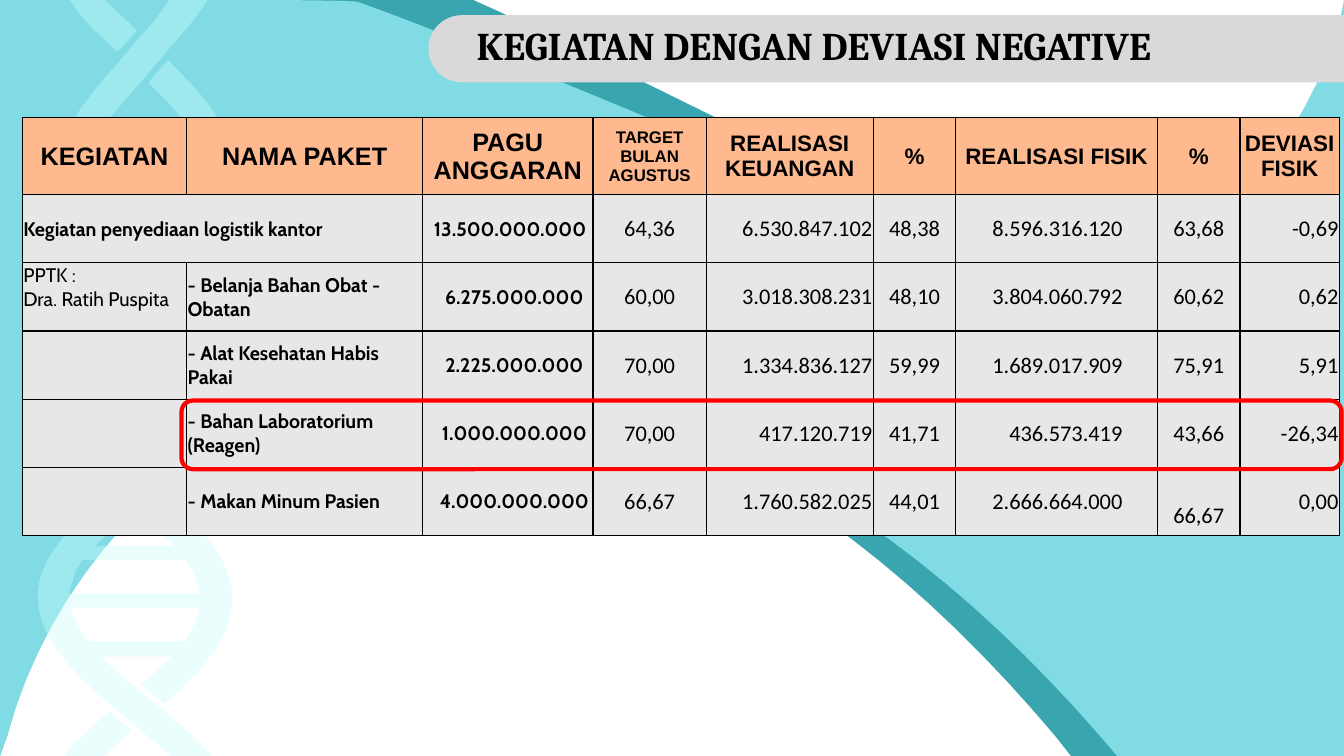
from lxml import etree
from pptx import Presentation
from pptx import util as u
from pptx.dml.color import RGBColor
from pptx.enum import shapes, text
from pptx.oxml import ns

TEAL = RGBColor(0x39, 0xA5, 0xAE)
CYAN = RGBColor(0x80, 0xDB, 0xE4)
HELIX = RGBColor(0xCD, 0xFE, 0xFD)
PEACH = RGBColor(0xFE, 0xB9, 0x8F)
GREY = RGBColor(0xE7, 0xE7, 0xE7)
BANNER = RGBColor(0xD9, 0xD9, 0xD9)
BLACK = RGBColor(0, 0, 0)
RED = RGBColor(0xFF, 0, 0)
LEFT, CENTER, RIGHT = text.PP_ALIGN.LEFT, text.PP_ALIGN.CENTER, text.PP_ALIGN.RIGHT

BACK_WAVE = [[
    (11, 0), (125, 107), (920, 324), (920, 540), (765, 540), (754, 526),
    (662, 417, 564, 339, 441, 291), (379, 267, 286, 261, 222, 284),
    (116, 317, 34, 415, 5, 526), (0, 540), (0, 0)]]
RIBBON = [[
    (3, 0), (338, 0), (358, 9), (441, 49, 543, 100, 607, 131),
    (826, 237, 916, 122, 948, 53), (953, 41), (953, 42), (949, 53),
    (922, 125, 840, 246, 614, 156), (518, 117, 340, 42, 258, 14), (2, 14)]]
FRONT_WAVE = [[
    (123, 0), (185, 0, 249, 0, 255.6, 1.4), (337, 30, 515, 107, 611, 145),
    (918, 271, 960, 0, 960, 0), (960, 540), (798, 540), (786, 526),
    (691, 417, 589, 339, 460, 291), (395, 267, 298, 261, 232, 284),
    (122, 317, 35, 415, 5, 526), (0, 540), (0, 0)]]
STRANDS = [
    [(121, 0), (148, 0), (140, 14, 129, 25, 119, 37), (77, 86), (131, 86),
     (124, 77, 115, 68, 106, 59), (120, 43), (145, 68, 168, 92, 168, 122),
     (168, 154, 148, 177, 125, 197), (108, 184), (116, 176, 124, 169, 130, 161),
     (78, 161), (85, 169, 93, 176, 102, 184), (125, 202),
     (141, 216, 156, 231, 162, 251), (165, 261, 165, 282, 161, 296),
     (153, 315, 135, 333, 118, 348), (94, 366), (85, 374, 76, 382, 68, 390),
     (124, 390), (117, 382, 109, 374, 102, 366), (118, 354),
     (143, 377, 166, 400, 166, 428), (166, 456, 143, 480, 117, 503),
     (101, 489), (109, 482, 116, 476, 123, 469), (72, 469),
     (79, 476, 86, 482, 94, 489), (114, 505), (125, 515, 134, 522, 142, 530),
     (151, 540), (122, 540), (114, 533), (81, 505), (51, 480, 27, 455, 27, 426),
     (27, 397, 53, 374, 80, 351), (103, 333), (112, 325, 120, 318, 126, 310),
     (78, 310), (83, 318, 89, 325, 96, 333), (80, 346),
     (58, 323, 38, 297, 38, 265), (38, 239, 60, 220, 84, 201), (101, 215),
     (91, 222, 83, 229, 76, 235), (130, 235), (124, 228, 117, 222, 108, 215),
     (85, 196), (62, 177, 41, 155, 41, 121), (41, 96, 61, 71, 85, 44),
     (101, 25), (107, 19, 112, 13, 117, 6)],
    [(50, 0), (75, 0), (98, 22), (84, 37), (72, 26, 58, 14, 50, 0)],
    [(78, 508), (94, 522), (74, 540), (46, 540), (50, 534)]]
RUNG_GAPS = [
    [(50, 434), (55, 446), (63, 458), (132, 458), (139, 446), (143, 434)],
    [(59, 400), (54, 408), (49, 424), (143, 424), (138, 408), (132, 400)],
    [(61, 279), (65, 289), (71, 302), (133, 302), (140, 289), (143, 279)],
    [(67, 246), (63, 251), (60, 269), (143, 269), (139, 251), (137, 246)],
    [(63, 129), (66, 141), (71, 151), (137, 151), (142, 141), (145, 129)],
    [(71, 96), (68, 102), (63, 119), (145, 119), (140, 102), (138, 96)]]

COLUMNS = [117.4, 168.5, 121.7, 81, 119.2, 59, 144, 59, 71]
HEADINGS = [("KEGIATAN", 18), ("NAMA PAKET", 18), ("PAGU ANGGARAN", 18),
            ("TARGET BULAN\nAGUSTUS", 12), ("REALISASI KEUANGAN", 16), ("%", 16),
            ("REALISASI FISIK", 16), ("%", 16), ("DEVIASI FISIK", 16)]
PACKAGES = [
    ("Kegiatan penyediaan logistik kantor", "", "13.500.000.000", "64,36",
     "6.530.847.102", "48,38", "8.596.316.120", "63,68", "-0,69"),
    ("PPTK :\nDra. Ratih Puspita", "- Belanja Bahan Obat - Obatan", "6.275.000.000",
     "60,00", "3.018.308.231", "48,10", "3.804.060.792", "60,62", "0,62"),
    ("", "- Alat Kesehatan Habis Pakai", "2.225.000.000", "70,00",
     "1.334.836.127", "59,99", "1.689.017.909", "75,91", "5,91"),
    ("", "- Bahan Laboratorium (Reagen)", "1.000.000.000", "70,00",
     "417.120.719", "41,71", "436.573.419", "43,66", "-26,34"),
    ("", "- Makan Minum Pasien", "4.000.000.000", "66,67",
     "1.760.582.025", "44,01", "2.666.664.000", "66,67", "0,00")]
ALIGNS = [LEFT, LEFT, CENTER, CENTER, RIGHT, CENTER, RIGHT, CENTER, RIGHT]


def flatten(contour, steps=16):
    """Return the contour's points in EMU, with its Bézier curves divided into steps."""
    points = [contour[0]]
    for segment in contour[1:]:
        if len(segment) == 2:
            points.append(segment)
            continue
        x0, y0 = points[-1]
        x1, y1, x2, y2, x3, y3 = segment
        for step in range(1, steps + 1):
            t = step / steps
            a, b, c, d = (1 - t) ** 3, 3 * t * (1 - t) ** 2, 3 * t * t * (1 - t), t ** 3
            points.append((a * x0 + b * x1 + c * x2 + d * x3,
                           a * y0 + b * y1 + c * y2 + d * y3))
    return [(u.Pt(x), u.Pt(y)) for x, y in points]


def add_outline(slide, contours, color):
    """Draw the closed contours as one filled freeform."""
    first, *others = [flatten(contour) for contour in contours]
    builder = slide.shapes.build_freeform(*first[0])
    builder.add_line_segments(first[1:], close=True)
    for points in others:
        builder.move_to(*points[0])
        builder.add_line_segments(points[1:], close=True)
    outline = builder.convert_to_shape()
    outline.shadow.inherit = False
    outline.fill.solid()
    outline.fill.fore_color.rgb = color
    outline.line.fill.background()
    return outline


def add_background(slide):
    """Draw the waves and the translucent helix."""
    add_outline(slide, BACK_WAVE, TEAL)
    add_outline(slide, RIBBON, TEAL)
    add_outline(slide, FRONT_WAVE, CYAN)
    helix = add_outline(slide, STRANDS + RUNG_GAPS, HELIX)
    tint = helix._element.spPr.find(".//" + ns.qn("a:srgbClr"))
    etree.SubElement(tint, ns.qn("a:alpha"), val="40000")


def add_banner(slide, left, top, width, height):
    """Draw the banner, rounded at its left end, and set the title on it."""
    banner = slide.shapes.add_shape(
        shapes.MSO_SHAPE.ROUND_2_SAME_RECTANGLE,
        u.Pt(left + (width - height) / 2), u.Pt(top + (height - width) / 2),
        u.Pt(height), u.Pt(width))
    banner.rotation = 90
    banner.adjustments[0], banner.adjustments[1] = 0, 0.5
    banner.shadow.inherit = False
    banner.fill.solid()
    banner.fill.fore_color.rgb = BANNER
    banner.line.fill.background()

    title = slide.shapes.title
    title._element.getparent().append(title._element)
    title.left, title.top = u.Pt(left + 27.3), u.Pt(top + 4.3)
    title.width, title.height = u.Pt(600), u.Pt(44)
    frame = title.text_frame
    frame.text = "KEGIATAN DENGAN DEVIASI NEGATIVE"
    frame.word_wrap = True
    frame.auto_size = text.MSO_AUTO_SIZE.NONE
    frame.vertical_anchor = text.MSO_ANCHOR.TOP
    frame.paragraphs[0].alignment = LEFT
    frame.paragraphs[0].line_spacing = 0.9
    style_font(frame.paragraphs[0].runs[0].font, "Cambria", 28, True)


def style_font(font, name, size, bold):
    """Set a black font."""
    font.name, font.size, font.bold = name, u.Pt(size), bold
    font.color.rgb = BLACK


def fill_cell(cell, words, color, align, name, size, bold):
    """Border, fill and write one cell."""
    properties = cell._tc.get_or_add_tcPr()
    for side in ("lnL", "lnR", "lnT", "lnB"):
        border = etree.SubElement(properties, ns.qn("a:" + side), w=str(u.Pt(1)))
        paint = etree.SubElement(border, ns.qn("a:solidFill"))
        etree.SubElement(paint, ns.qn("a:srgbClr"), val=str(BLACK))
    cell.fill.solid()
    cell.fill.fore_color.rgb = color
    cell.margin_left = cell.margin_right = cell.margin_top = u.Pt(0.7)
    cell.margin_bottom = 0
    cell.vertical_anchor = text.MSO_ANCHOR.MIDDLE
    cell.text_frame.text = words
    for paragraph in cell.text_frame.paragraphs:
        paragraph.alignment = align
        for run in paragraph.runs:
            style_font(run.font, name, size, bold)


def add_budget_table(slide, left, top, head_height, row_height):
    """Build the budget table and frame the row with the large deviation."""
    width = sum(COLUMNS)
    height = head_height + row_height * len(PACKAGES)
    table = slide.shapes.add_table(len(PACKAGES) + 1, len(COLUMNS), u.Pt(left), u.Pt(top),
                                   u.Pt(width), u.Pt(height)).table
    for column, column_width in zip(table.columns, COLUMNS):
        column.width = u.Pt(column_width)
    for number, row in enumerate(table.rows):
        row.height = u.Pt(row_height if number else head_height)
    for col, (heading, size) in enumerate(HEADINGS):
        fill_cell(table.cell(0, col), heading, PEACH, CENTER, "Arial", size, True)
    for row, package in enumerate(PACKAGES, 1):
        for col, words in enumerate(package):
            name, size = ("Cabin", 14) if col < 3 else ("Calibri", 16)
            bold = col in (1, 2) or (row == 1 and col == 0)
            fill_cell(table.cell(row, col), words, GREY, ALIGNS[col], name, size, bold)
        table.cell(row, 2).margin_left = u.Pt(4 if row == 1 else 10)
        table.cell(row, 6).margin_right = u.Pt(25)
    table.cell(1, 0).merge(table.cell(1, 1))
    table.cell(2, 0).vertical_anchor = text.MSO_ANCHOR.TOP
    table.cell(len(PACKAGES), 7).margin_top = u.Pt(20)

    highlight = slide.shapes.add_shape(
        shapes.MSO_SHAPE.ROUNDED_RECTANGLE, u.Pt(left + COLUMNS[0] - 3.8),
        u.Pt(top + head_height + 3 * row_height + 1), u.Pt(828.7), u.Pt(49))
    highlight.shadow.inherit = False
    highlight.fill.background()
    highlight.line.color.rgb = RED
    highlight.line.width = u.Pt(3)


def main():
    """Build and save the slide."""
    deck = Presentation()
    deck.slide_width, deck.slide_height = u.Pt(960), u.Pt(540)
    slide = deck.slides.add_slide(deck.slide_layouts[5])
    add_background(slide)
    add_banner(slide, 306, 10.8, 654, 48)
    add_budget_table(slide, 16, 83.8, 55.2, 48.7)
    deck.save("out.pptx")


if __name__ == "__main__":
    main()
